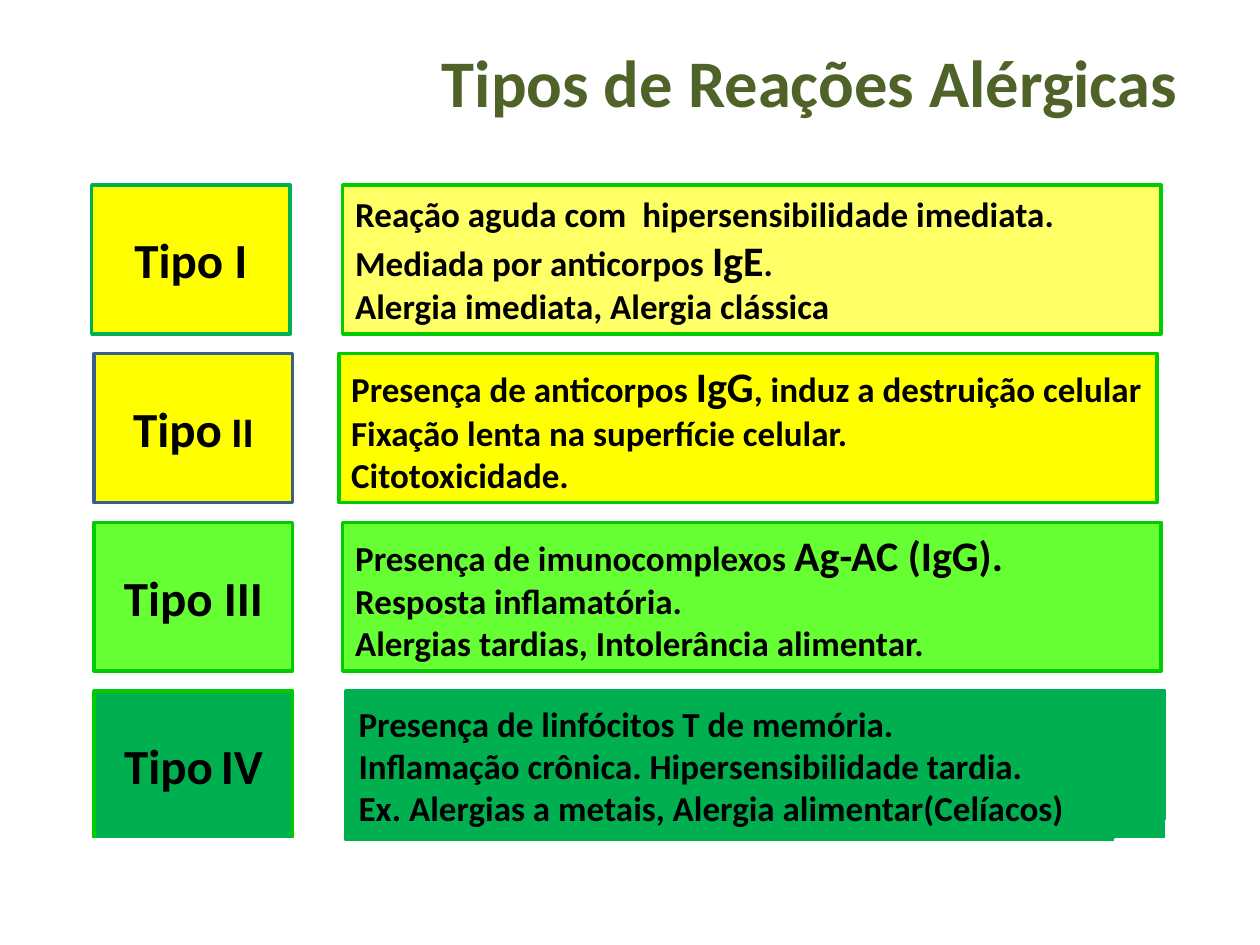
from dataclasses import dataclass

from pptx import Presentation
from pptx.dml.color import RGBColor
from pptx.enum.shapes import MSO_SHAPE
from pptx.enum.text import MSO_ANCHOR, PP_ALIGN
from pptx.util import Cm, Pt

RECTANGLE = MSO_SHAPE.RECTANGLE
MIDDLE = MSO_ANCHOR.MIDDLE
CENTER, LEFT = PP_ALIGN.CENTER, PP_ALIGN.LEFT


@dataclass(frozen=True)
class Theme:
    font: str = "Calibri"
    title: str = "4F6228"
    text: str = "000000"
    white: str = "FFFFFF"
    yellow: str = "FFFF00"
    pale_yellow: str = "FFFF66"
    lime: str = "66FF33"
    green: str = "00B050"
    bright_green: str = "00CC00"
    blue: str = "3A5F8C"
    title_size: float = 38
    label_size: float = 28
    emphasis_size: float = 24
    body_size: float = 20
    line_width: float = 2


THEME = Theme()
ROW_TOP, ROW_HEIGHT, ROW_PITCH = 3.73, 3.0, 3.4
LABEL_WIDTH, DESCRIPTION_WIDTH = 4.0, 16.5

# A line is a list of pieces; a (text, size) piece departs from the line's size.
# Each row: label left, fill, line, pieces; description left, fill, line, lines.
ROWS = [
    (1.85, THEME.yellow, THEME.green, ["Tipo I"],
     6.91, THEME.pale_yellow, THEME.bright_green,
     [["Reação aguda com  hipersensibilidade imediata."],
      ["Mediada por anticorpos ", ("IgE", THEME.emphasis_size), "."],
      ["Alergia imediata, Alergia clássica"]]),
    (1.9, THEME.yellow, THEME.blue, ["Tipo", (" II", THEME.emphasis_size)],
     6.83, THEME.yellow, THEME.bright_green,
     [["Presença de anticorpos ", ("IgG", THEME.emphasis_size),
       ", induz a destruição celular"],
      ["Fixação lenta na superfície celular."],
      ["Citotoxicidade."]]),
    (1.9, THEME.lime, THEME.bright_green, ["Tipo III"],
     6.91, THEME.lime, THEME.bright_green,
     [["Presença de imunocomplexos ", ("Ag-AC (IgG).", THEME.emphasis_size)],
      ["Resposta inflamatória."],
      ["Alergias tardias, Intolerância alimentar."]]),
    (1.9, THEME.green, THEME.bright_green, ["Tipo", (" ", THEME.body_size), "IV"],
     6.98, THEME.green, THEME.green,
     [["Presença de linfócitos T de memória."],
      ["Inflamação crônica. Hipersensibilidade tardia."],
      ["Ex. Alergias a metais, Alergia alimentar(Celíacos)"]]),
]

# White blocks that trim the lower edge of the last row: left, top, width, height.
TRIM_BLOCKS = [
    (0.89, 16.92, 5.94, 1.8),
    (12.5, 17.12, 9.4, 1.93),
    (23.52, 16.54, 1.22, 2.21),
    (22.5, 16.92, 1.02, 1.8),
]


def write_lines(text_frame, lines, size, alignment, color=THEME.text):
    text_frame.word_wrap = True
    text_frame.vertical_anchor = MIDDLE
    for index, pieces in enumerate(lines):
        paragraph = text_frame.add_paragraph() if index else text_frame.paragraphs[0]
        paragraph.alignment = alignment
        paragraph.font.name = THEME.font
        paragraph.font.bold = True
        paragraph.font.size = Pt(size)
        paragraph.font.color.rgb = RGBColor.from_string(color)
        for piece in pieces:
            text, own_size = piece if isinstance(piece, tuple) else (piece, None)
            run = paragraph.add_run()
            run.text = text
            if own_size:
                run.font.size = Pt(own_size)


def add_box(slide, box, fill, line):
    shape = slide.shapes.add_shape(RECTANGLE, *(Cm(length) for length in box))
    shape.shadow.inherit = False
    shape.fill.solid()
    shape.fill.fore_color.rgb = RGBColor.from_string(fill)
    shape.line.color.rgb = RGBColor.from_string(line)
    shape.line.width = Pt(THEME.line_width)
    return shape


def add_title(slide, box, text):
    title = slide.shapes.add_textbox(*(Cm(length) for length in box))
    write_lines(title.text_frame, [[text]], THEME.title_size, CENTER, THEME.title)


def add_type_row(slide, top, row):
    """Place one allergy type: its label on the left, its description on the right."""
    (label_left, label_fill, label_line, label,
     description_left, fill, line, description) = row
    label_box = add_box(slide, (label_left, top, LABEL_WIDTH, ROW_HEIGHT),
                        label_fill, label_line)
    write_lines(label_box.text_frame, [label], THEME.label_size, CENTER)
    description_box = add_box(
        slide, (description_left, top, DESCRIPTION_WIDTH, ROW_HEIGHT), fill, line)
    write_lines(description_box.text_frame, description, THEME.body_size, LEFT)


def main():
    presentation = Presentation()
    presentation.slide_width, presentation.slide_height = Cm(25.4), Cm(19.05)
    slide = presentation.slides.add_slide(presentation.slide_layouts[6])
    add_title(slide, (8.31, 0.53, 16.03, 2.21), "Tipos de Reações Alérgicas")
    for index, row in enumerate(ROWS):
        add_type_row(slide, ROW_TOP + index * ROW_PITCH, row)
    for block in TRIM_BLOCKS:
        add_box(slide, block, THEME.white, THEME.white)
    presentation.save("out.pptx")


if __name__ == "__main__":
    main()
